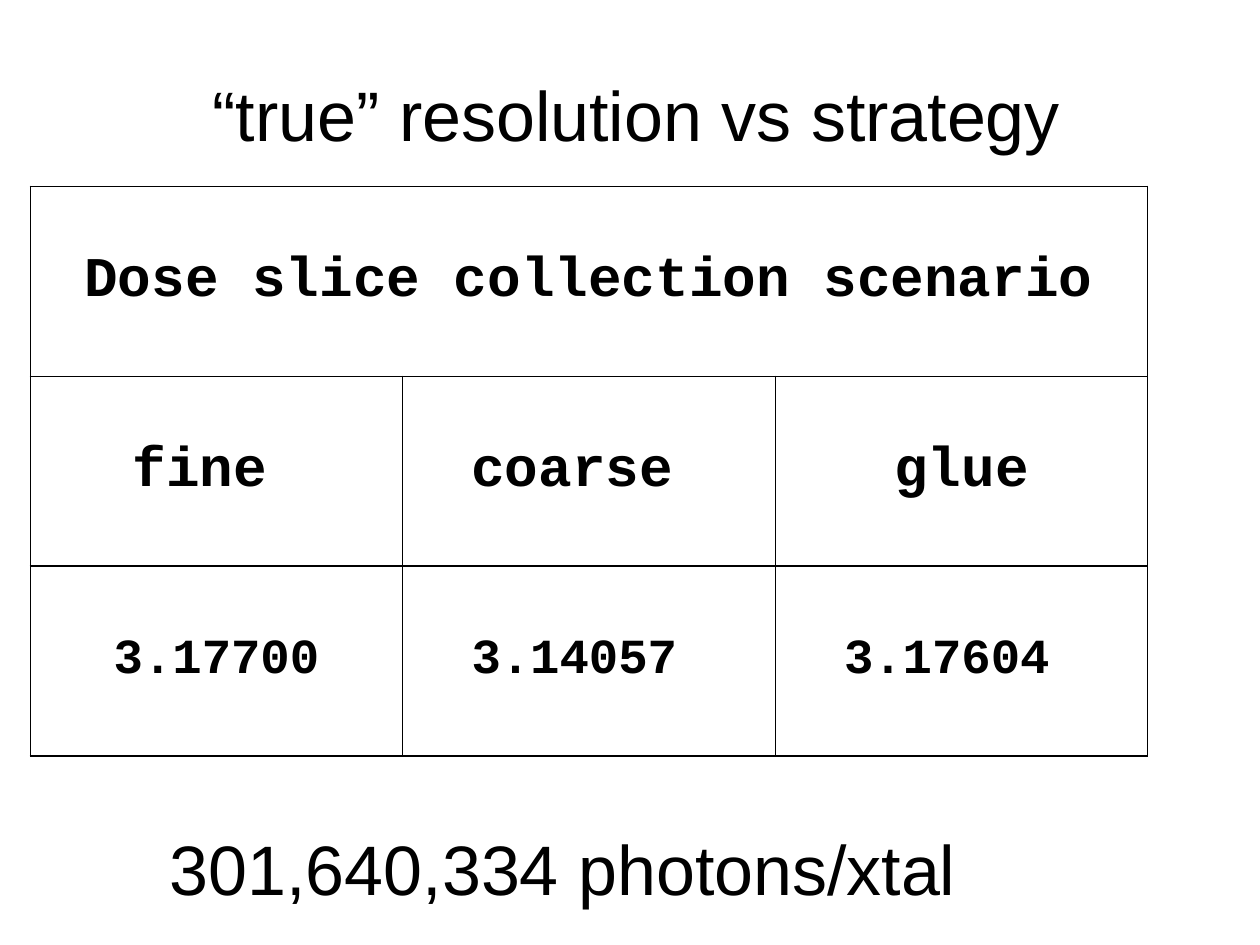
import pptx
import pptx.util
import pptx.dml.color
import pptx.enum.text
import pptx.oxml
import pptx.oxml.ns
from pptx.util import Inches

BLACK = pptx.dml.color.RGBColor(0, 0, 0)
BORDER_XML = (
    '<a:{side} {ns} w="12700"><a:solidFill><a:srgbClr val="{color}"/>'
    "</a:solidFill></a:{side}>"
)
HEADING = "Dose slice collection scenario"
STRATEGIES = ["fine ", "coarse ", "glue"]
RESOLUTIONS = ["3.17700", "3.14057 ", "3.17604 "]


def write_text(frame, text, *, size, font, bold=False, align=pptx.enum.text.PP_ALIGN.LEFT):
    paragraph = frame.paragraphs[0]
    paragraph.alignment = align
    run = paragraph.add_run()
    run.text = text
    run.font.size = pptx.util.Pt(size)
    run.font.name = font
    run.font.bold = bold
    run.font.color.rgb = BLACK


def add_line_of_text(slide, text, left, top, width):
    box = slide.shapes.add_textbox(Inches(left), Inches(top), Inches(width), Inches(0.77))
    box.text_frame.word_wrap = False
    box.text_frame.auto_size = pptx.enum.text.MSO_AUTO_SIZE.SHAPE_TO_FIT_TEXT
    write_text(box.text_frame, text, size=40, font="Arial")


def style_cell(cell):
    cell.margin_left = cell.margin_right = Inches(0.07)
    cell.margin_top = cell.margin_bottom = Inches(0.04)
    cell.vertical_anchor = pptx.enum.text.MSO_ANCHOR.MIDDLE
    properties = cell._tc.get_or_add_tcPr()
    for side in ("lnL", "lnR", "lnT", "lnB"):
        border = BORDER_XML.format(side=side, ns=pptx.oxml.ns.nsdecls("a"), color=BLACK)
        properties.append(pptx.oxml.parse_xml(border))
    cell.fill.background()


def add_resolution_table(slide):
    rows = [([HEADING], 32), (STRATEGIES, 32), (RESOLUTIONS, 28)]
    table = slide.shapes.add_table(
        len(rows), len(STRATEGIES), Inches(0.24), Inches(1.48), Inches(8.87), Inches(4.52)
    ).table
    table.first_row = table.horz_banding = False
    for cell in table.iter_cells():
        style_cell(cell)
    table.cell(0, 0).merge(table.cell(0, len(STRATEGIES) - 1))
    for row, (texts, size) in enumerate(rows):
        for column, text in enumerate(texts):
            write_text(
                table.cell(row, column).text_frame, text, size=size, font="Courier New",
                bold=True, align=pptx.enum.text.PP_ALIGN.CENTER,
            )


def main():
    presentation = pptx.Presentation()
    presentation.slide_width = Inches(10)
    presentation.slide_height = Inches(7.5)
    slide = presentation.slides.add_slide(presentation.slide_layouts[6])
    add_resolution_table(slide)
    add_line_of_text(slide, "“true” resolution vs strategy", 1.59, 0.52, 7)
    add_line_of_text(slide, "301,640,334 photons/xtal", 1.25, 6.5, 6.5)
    presentation.save("out.pptx")


if __name__ == "__main__":
    main()
